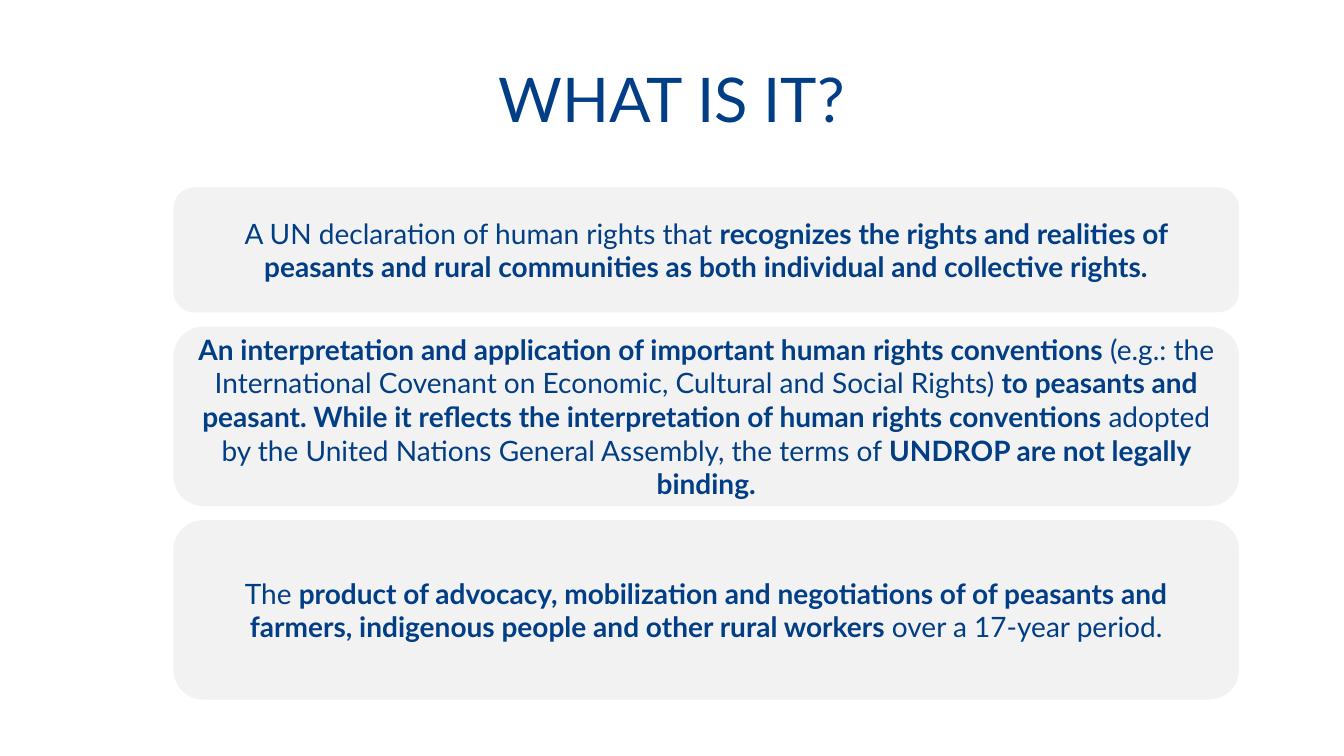
"""Build the slide that explains what the declaration is."""
from pptx import Presentation
from pptx.dml.color import RGBColor
from pptx.enum.shapes import MSO_SHAPE
from pptx.enum.text import MSO_ANCHOR, MSO_AUTO_SIZE, PP_ALIGN
from pptx.util import Inches, Pt

ROUNDED = MSO_SHAPE.ROUNDED_RECTANGLE
MIDDLE = MSO_ANCHOR.MIDDLE
NO_AUTOFIT = MSO_AUTO_SIZE.NONE
CENTER = PP_ALIGN.CENTER

COLORS = {"navy": "023E85", "card": "F2F2F2"}
FONT = "Lato"
SLIDE_WIDTH, SLIDE_HEIGHT = 13.33, 7.5
LEFT = 1.72
CARD_WIDTH = 10.57
CARDS_TOP = 1.86
CARD_GAP = 0.14
TITLE_ONLY = 5

CARDS = [
    (1.24, [
        ("A UN declaration of human rights that ", False),
        ("recognizes the rights and realities of peasants and rural communities "
         "as both individual and collective rights.", True),
    ]),
    (1.78, [
        ("An interpretation and application of important human rights conventions ", True),
        ("(e.g.: the International Covenant on Economic, Cultural and Social Rights)", False),
        (" to peasants and peasant. While it reflects the interpretation of "
         "human rights conventions ", True),
        ("adopted by the United Nations General Assembly, the terms of ", False),
        ("UNDROP are not legally binding.", True),
    ]),
    (1.78, [
        ("The ", False),
        ("product of advocacy, mobilization and negotiations of of peasants and farmers, "
         "indigenous people and other rural workers ", True),
        ("over a 17-year period.", False),
    ]),
]


def color(name):
    """Return the named color."""
    return RGBColor.from_string(COLORS[name])


def write_runs(shape, pieces, size):
    """Write centred text from pairs of wording and boldness."""
    frame = shape.text_frame
    frame.word_wrap = True
    frame.auto_size = NO_AUTOFIT
    frame.vertical_anchor = MIDDLE
    paragraph = frame.paragraphs[0]
    paragraph.alignment = CENTER
    for wording, bold in pieces:
        run = paragraph.add_run()
        run.text = wording
        run.font.name = FONT
        run.font.size = Pt(size)
        run.font.bold = bold
        run.font.color.rgb = color("navy")
    return paragraph


def add_title(slide, wording):
    """Place and format the title placeholder."""
    title = slide.shapes.title
    title.left, title.top = Inches(LEFT), Inches(0.21)
    title.width, title.height = Inches(9.89), Inches(1.62)
    write_runs(title, [(wording, False)], 44).line_spacing = 0.9


def add_card(slide, top, height, pieces):
    """Add one rounded card with mixed bold and regular text."""
    card = slide.shapes.add_shape(
        ROUNDED, Inches(LEFT), Inches(top), Inches(CARD_WIDTH), Inches(height))
    card.shadow.inherit = False
    card.fill.solid()
    card.fill.fore_color.rgb = color("card")
    card.line.fill.background()
    write_runs(card, pieces, 20)


def main():
    """Build and save the presentation."""
    presentation = Presentation()
    presentation.slide_width = Inches(SLIDE_WIDTH)
    presentation.slide_height = Inches(SLIDE_HEIGHT)
    slide = presentation.slides.add_slide(presentation.slide_layouts[TITLE_ONLY])
    add_title(slide, "WHAT IS IT?")
    top = CARDS_TOP
    for height, pieces in CARDS:
        add_card(slide, top, height, pieces)
        top += height + CARD_GAP
    presentation.save("out.pptx")


if __name__ == "__main__":
    main()
